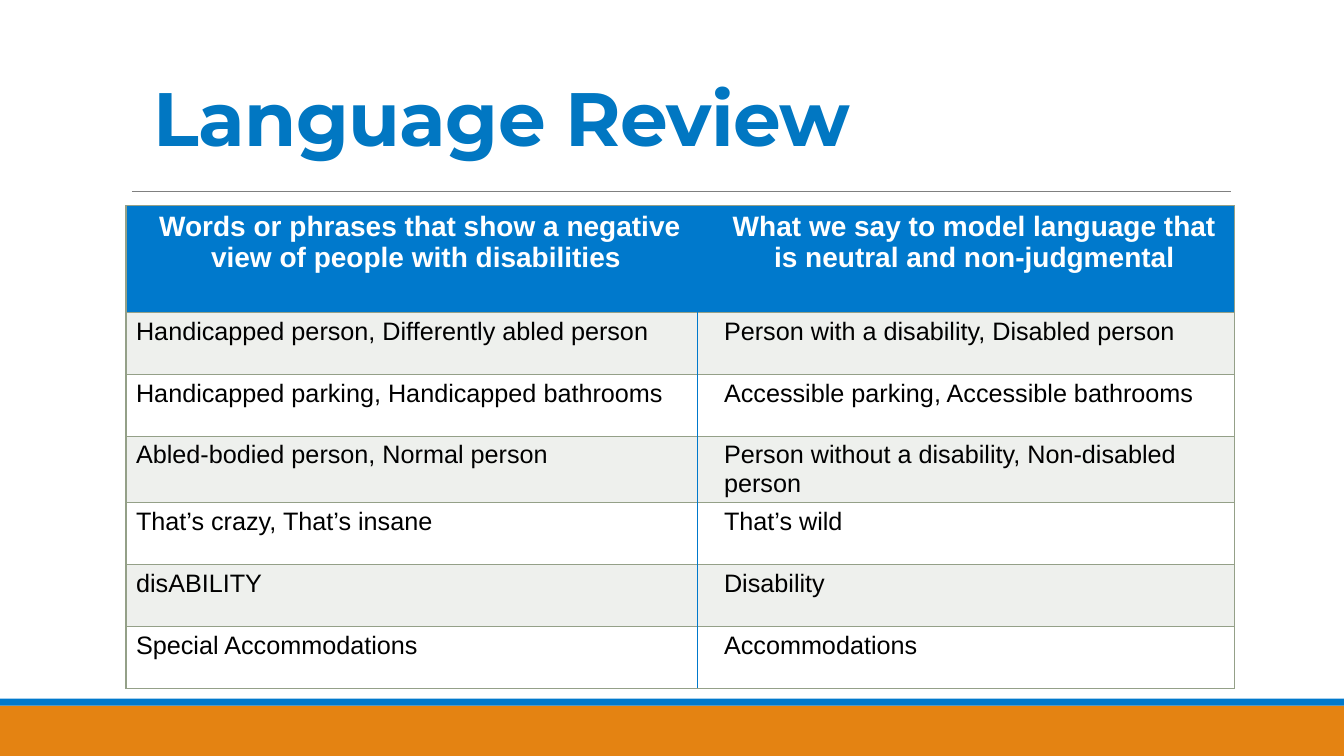
from typing import NamedTuple

from lxml.etree import SubElement
from pptx import Presentation
from pptx.dml.color import RGBColor
from pptx.enum.shapes import MSO_CONNECTOR as Connector, MSO_SHAPE as Preset
from pptx.enum.text import MSO_ANCHOR as Anchor, PP_ALIGN as Align
from pptx.oxml import parse_xml
from pptx.oxml.ns import nsdecls, qn
from pptx.slide import Slide
from pptx.table import Table, _Cell as Cell
from pptx.text.text import TextFrame
from pptx.util import Pt

COLORS = {
    "title": "0177C2",
    "blue": "0079CC",
    "orange": "E48312",
    "rule": "808080",
    "border": "94A088",
    "band": "EEF0ED",
    "white": "FFFFFF",
    "black": "000000",
}


class Bar(NamedTuple):
    top: float
    height: float
    color: str


class Line(NamedTuple):
    x1: float
    y1: float
    x2: float
    y2: float
    color: str
    width: float


class Phrases(NamedTuple):
    negative: str
    neutral: str


SLIDE_WIDTH, SLIDE_HEIGHT = 960, 540
BARS = [Bar(504, 36, "orange"), Bar(499, 5, "blue")]
TITLE_RULE = Line(94.3, 136.8, 879.1, 136.8, "rule", 0.5)
COLUMN_DIVIDER = Line(498.2, 149.8, 498.2, 491.8, "blue", 1)
TABLE_LEFT, TABLE_TOP = 90, 147
COLUMN_WIDTHS = (420, 372)
HEADER_HEIGHT, ROW_HEIGHT = 76, 44.25
PHRASES = [
    Phrases("Words or phrases that show a negative view of people with disabilities ",
            "What we say to model language that is neutral and non-judgmental"),
    Phrases("Handicapped person, Differently abled person",
            "Person with a disability, Disabled person"),
    Phrases("Handicapped parking, Handicapped bathrooms",
            "Accessible parking, Accessible bathrooms"),
    Phrases("Abled-bodied person, Normal person",
            "Person without a disability, Non-disabled person"),
    Phrases("That’s crazy, That’s insane", "That’s wild"),
    Phrases("disABILITY", "Disability"),
    Phrases("Special Accommodations", "Accommodations"),
]


def rgb(name: str) -> RGBColor:
    return RGBColor.from_string(COLORS[name])


def format_text(text_frame: TextFrame, font_name: str, size: float, color: str,
                bold: bool, align: Align) -> None:
    for paragraph in text_frame.paragraphs:
        paragraph.alignment = align
        for run in paragraph.runs:
            font = run.font
            font.name, font.size, font.bold = font_name, Pt(size), bold
            font.color.rgb = rgb(color)


def add_bar(slide: Slide, bar: Bar) -> None:
    shape = slide.shapes.add_shape(
        Preset.RECTANGLE, 0, Pt(bar.top), Pt(SLIDE_WIDTH), Pt(bar.height))
    shape.shadow.inherit = False
    shape.fill.solid()
    shape.fill.fore_color.rgb = rgb(bar.color)
    shape.line.fill.background()


def add_line(slide: Slide, line: Line) -> None:
    connector = slide.shapes.add_connector(
        Connector.STRAIGHT, Pt(line.x1), Pt(line.y1), Pt(line.x2), Pt(line.y2))
    connector.line.color.rgb = rgb(line.color)
    connector.line.width = Pt(line.width)
    SubElement(connector._element.spPr, qn("a:effectLst"))


def set_title(slide: Slide) -> None:
    title = slide.shapes.title
    title.left, title.top = Pt(102.2), Pt(23.8)
    title.width, title.height = Pt(648), Pt(95.8)
    text_frame = title.text_frame
    text_frame.text = "Language Review"
    text_frame.vertical_anchor = Anchor.BOTTOM
    text_frame.word_wrap = True
    paragraph = text_frame.paragraphs[0]
    paragraph.line_spacing = 0.85
    format_text(text_frame, "Montserrat", 54, "title", True, Align.LEFT)
    paragraph.runs[0].font._element.set("spc", "-50")


def set_borders(cell: Cell, hidden_side: str) -> None:
    """Outline the cell, leaving the side between the two columns open."""
    properties = cell._tc.get_or_add_tcPr()
    for index, side in enumerate(("lnL", "lnR", "lnT", "lnB")):
        if side == hidden_side:
            fill = "<a:noFill/>"
        else:
            fill = f'<a:solidFill><a:srgbClr val="{COLORS["border"]}"/></a:solidFill>'
        border = parse_xml(f'<a:{side} {nsdecls("a")} w="{Pt(1)}">{fill}</a:{side}>')
        properties.insert(index, border)


def fill_table(table: Table) -> None:
    for column, width in zip(table.columns, COLUMN_WIDTHS):
        column.width = Pt(width)
    for row_index, phrases in enumerate(PHRASES):
        is_header = row_index == 0
        table.rows[row_index].height = Pt(HEADER_HEIGHT if is_header else ROW_HEIGHT)
        fill = "blue" if is_header else ("band" if row_index % 2 else "white")
        for column_index, text in enumerate(phrases):
            cell = table.cell(row_index, column_index)
            cell.fill.solid()
            cell.fill.fore_color.rgb = rgb(fill)
            set_borders(cell, ("lnR", "lnL")[column_index])
            cell.text_frame.text = text
            if is_header:
                format_text(cell.text_frame, "Arial", 20, "white", True, Align.CENTER)
            else:
                format_text(cell.text_frame, "Arial", 18, "black", False, Align.LEFT)


def main() -> None:
    presentation = Presentation()
    presentation.slide_width, presentation.slide_height = Pt(SLIDE_WIDTH), Pt(SLIDE_HEIGHT)
    slide = presentation.slides.add_slide(presentation.slide_layouts.get_by_name("Title Only"))
    for bar in BARS:
        add_bar(slide, bar)
    add_line(slide, TITLE_RULE)
    set_title(slide)
    frame = slide.shapes.add_table(
        len(PHRASES), len(COLUMN_WIDTHS), Pt(TABLE_LEFT), Pt(TABLE_TOP),
        Pt(sum(COLUMN_WIDTHS)), Pt(HEADER_HEIGHT + ROW_HEIGHT * (len(PHRASES) - 1)))
    fill_table(frame.table)
    add_line(slide, COLUMN_DIVIDER)
    presentation.save("out.pptx")


if __name__ == "__main__":
    main()
